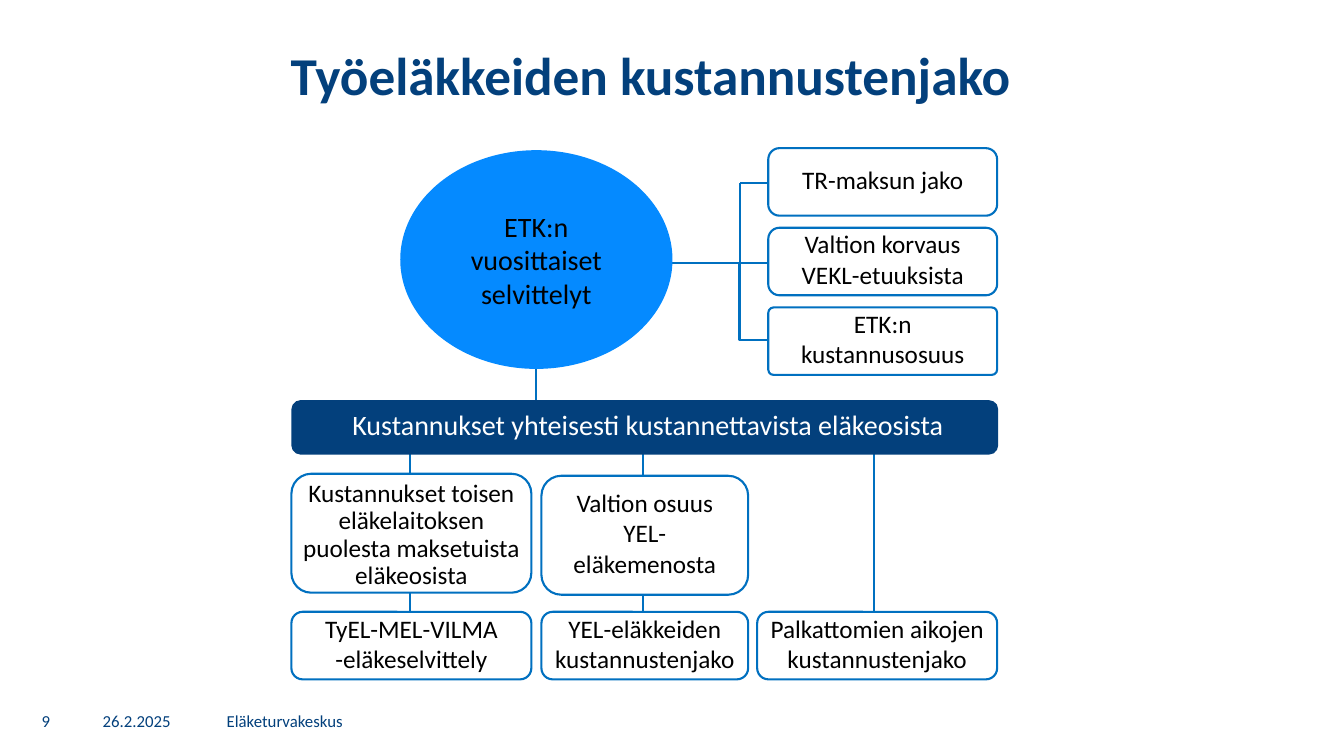
from pptx import Presentation
from pptx.dml.color import RGBColor as Rgb
from pptx.enum.shapes import MSO_CONNECTOR as Con, MSO_SHAPE as Kind
from pptx.enum.text import MSO_ANCHOR as Anchor, PP_ALIGN as Align
from pptx.oxml.ns import qn
from pptx.util import Inches, Pt
from lxml.etree import SubElement as Sub

HUES = {"navy": "03407C", "edge": "0070C0", "sky": "058AFF",
        "white": "FFFFFF", "black": "000000"}


class Chart:
    """Draws on one slide, on a grid of columns and rows a tenth of an inch wide."""

    font = "Calibri"
    weight = Pt(1.5)

    def __init__(self, deck):
        self.slide = deck.slides.add_slide(deck.slide_layouts[6])
        self.shapes = self.slide.shapes

    def grid(self, *cells):
        return [Inches(cell / 10) for cell in cells]

    def hue(self, name):
        return Rgb.from_string(HUES[name])

    def letter(self, shape, text, size, hue, pads, align=Align.CENTER,
               anchor=Anchor.MIDDLE, bold=False, space=None):
        frame = shape.text_frame
        frame.word_wrap = True
        frame.vertical_anchor = anchor
        (frame.margin_left, frame.margin_top,
         frame.margin_right, frame.margin_bottom) = self.grid(*pads)
        frame.text = text
        for para in frame.paragraphs:
            para.alignment = align
            para.line_spacing = space
            para.font.name = self.font
            para.font.size = Pt(size)
            para.font.bold = bold
            para.font.color.rgb = self.hue(hue)

    def label(self, spot, text, size, **style):
        box = self.shapes.add_textbox(*self.grid(*spot))
        self.letter(box, text, size, "navy", (1, 0.5, 1, 0.5), **style)

    def node(self, spot, text, kind=Kind.ROUNDED_RECTANGLE, fill="white",
             edge="edge", ink="black", size=18, pads=(0, 0, 0, 0.5),
             curve=None, space=None):
        shape = self.shapes.add_shape(kind, *self.grid(*spot))
        shape.shadow.inherit = False
        shape.fill.solid()
        shape.fill.fore_color.rgb = self.hue(fill)
        if edge:
            shape.line.color.rgb = self.hue(edge)
            shape.line.width = self.weight
        else:
            shape.line.fill.background()
        if curve:
            shape.adjustments[0] = curve
        self.letter(shape, text, size, ink, pads, space=space)

    def link(self, *ends, kind=Con.STRAIGHT):
        line = self.shapes.add_connector(kind, *self.grid(*ends))
        line.line.color.rgb = self.hue("edge")
        line.line.width = self.weight
        Sub(line._element.spPr, qn("a:effectLst"))


def main():
    deck = Presentation()
    deck.slide_width, deck.slide_height = Inches(13.33), Inches(7.5)
    chart = Chart(deck)

    chart.label((0, 4.4, 129.1, 9.4), "Työeläkkeiden kustannustenjako", 38,
                anchor=Anchor.TOP, bold=True, space=0.9)
    chart.label((2, 69.5, 5.1, 4), "9", 12)
    for left, wide, text in ((9.2, 11.3, "26.2.2025"),
                             (21.5, 102.6, "Eläketurvakeskus")):
        chart.label((left, 69.5, wide, 4), text, 12, align=Align.LEFT)

    chart.link(64.6, 26.1, 82.1, 33.7, kind=Con.ELBOW)
    chart.link(73.4, 26.1, 73.4, 18.2)
    chart.link(73.4, 18.2, 76.2, 18.2)
    chart.link(73.4, 26.1, 76.2, 26.1)
    chart.link(53.2, 36.6, 53.2, 39.7)
    for mid in (40.7, 63.8, 86.7):
        chart.link(mid, 45, mid, 60.7)

    topics = (("TR-maksun jako", None),
              ("Valtion korvaus\vVEKL-etuuksista", None),
              ("ETK:n kustannusosuus", 0.08))
    for row, (text, curve) in enumerate(topics):
        chart.node((76.2, 14.7 + 7.9 * row, 22.7, 6.7), text, curve=curve)

    chart.node((39.7, 14.9, 27, 21.7), "ETK:n vuosittaiset selvittelyt",
               kind=Kind.OVAL, fill="sky", edge=None, size=20,
               pads=(1, 0.5, 1, 0.5))
    chart.node((28.9, 39.7, 70.1, 5.4),
               "Kustannukset yhteisesti kustannettavista eläkeosista",
               fill="navy", edge=None, ink="white", size=20,
               pads=(1.6, 0, 1, 0.7))

    chart.node((28.9, 47, 23.8, 11.8),
               "Kustannukset toisen eläkelaitoksen puolesta maksetuista "
               "eläkeosista", pads=(0, 0.4, 0, 0), space=0.9)
    chart.node((53.7, 47.2, 20.5, 11.8), "Valtion osuus\vYEL-\veläkemenosta")
    for left, wide, text in (
            (28.9, 23.8, "TyEL-MEL-VILMA\n-eläkeselvittely"),
            (53.7, 20.5, "YEL-eläkkeiden\nkustannustenjako"),
            (75.1, 23.8, "Palkattomien aikojen\nkustannustenjako")):
        chart.node((left, 60.7, wide, 6.7), text)

    deck.save("out.pptx")


if __name__ == "__main__":
    main()
